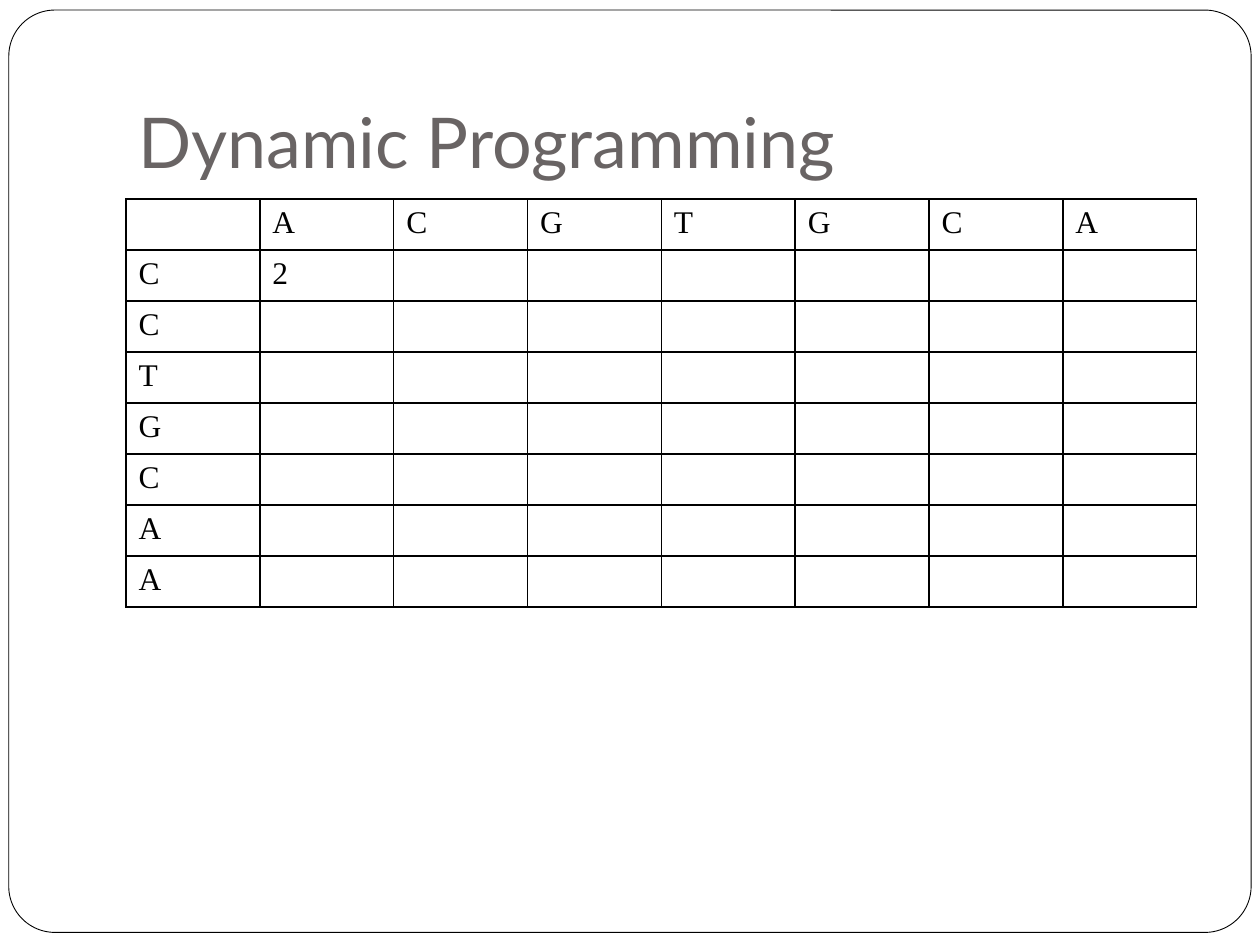
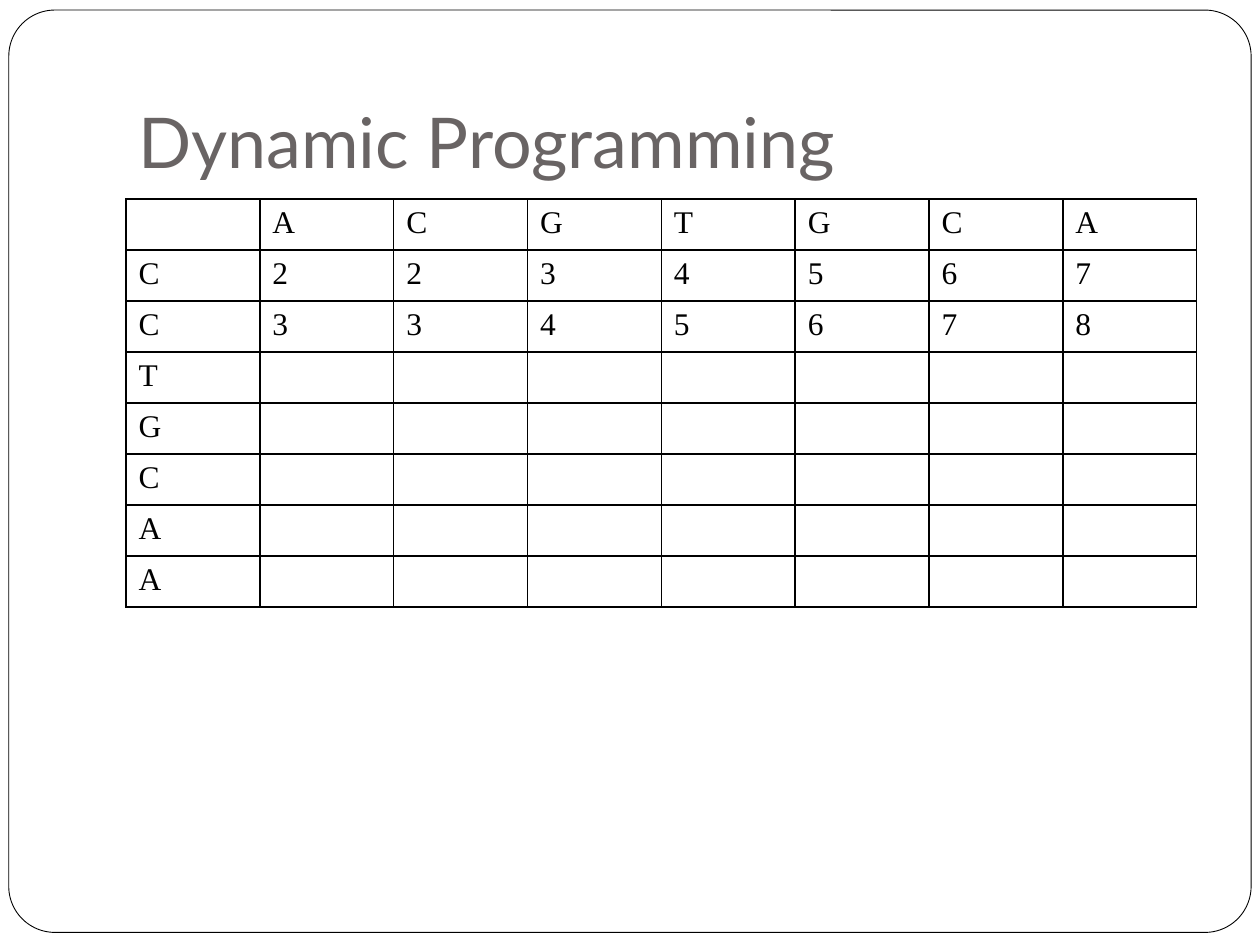
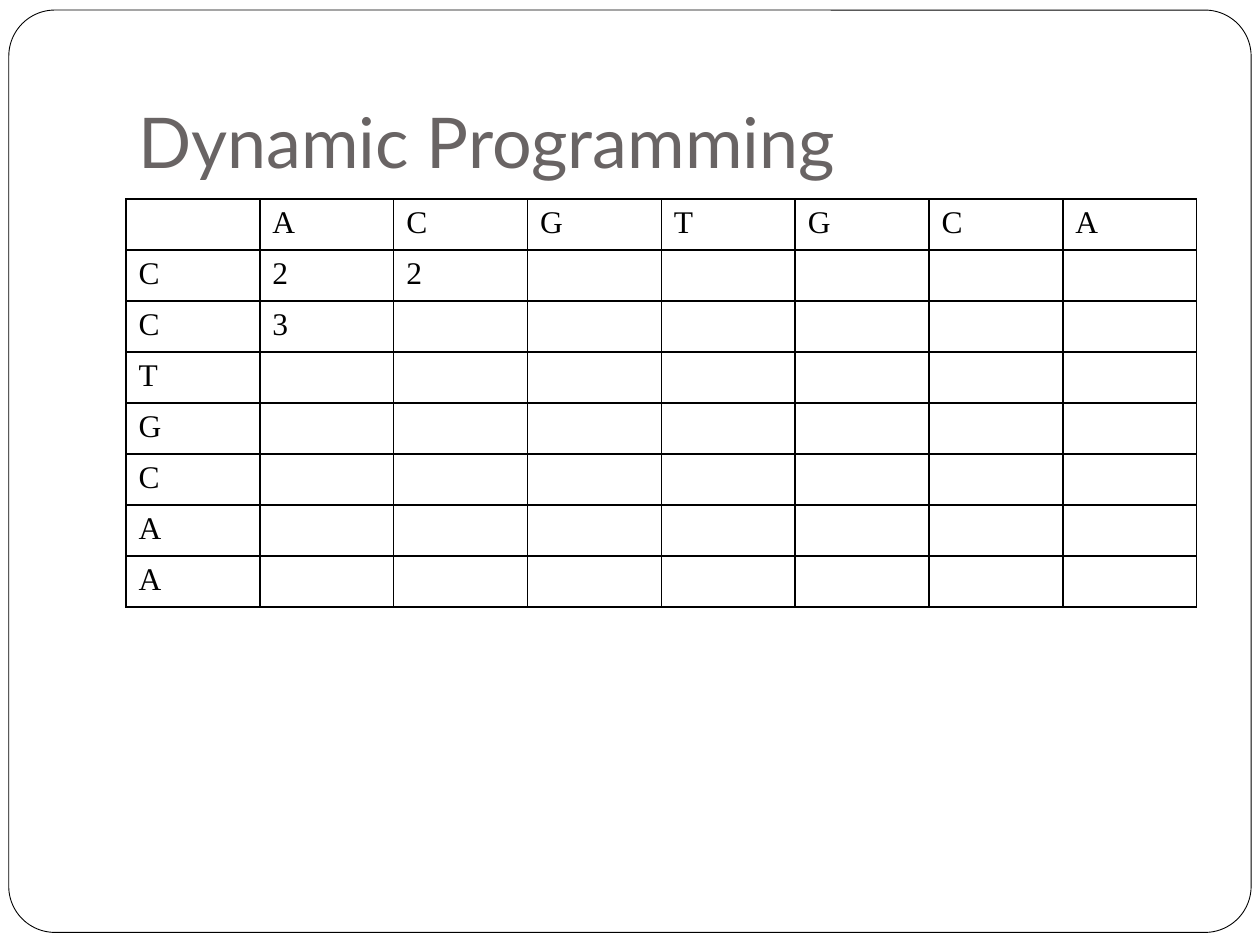
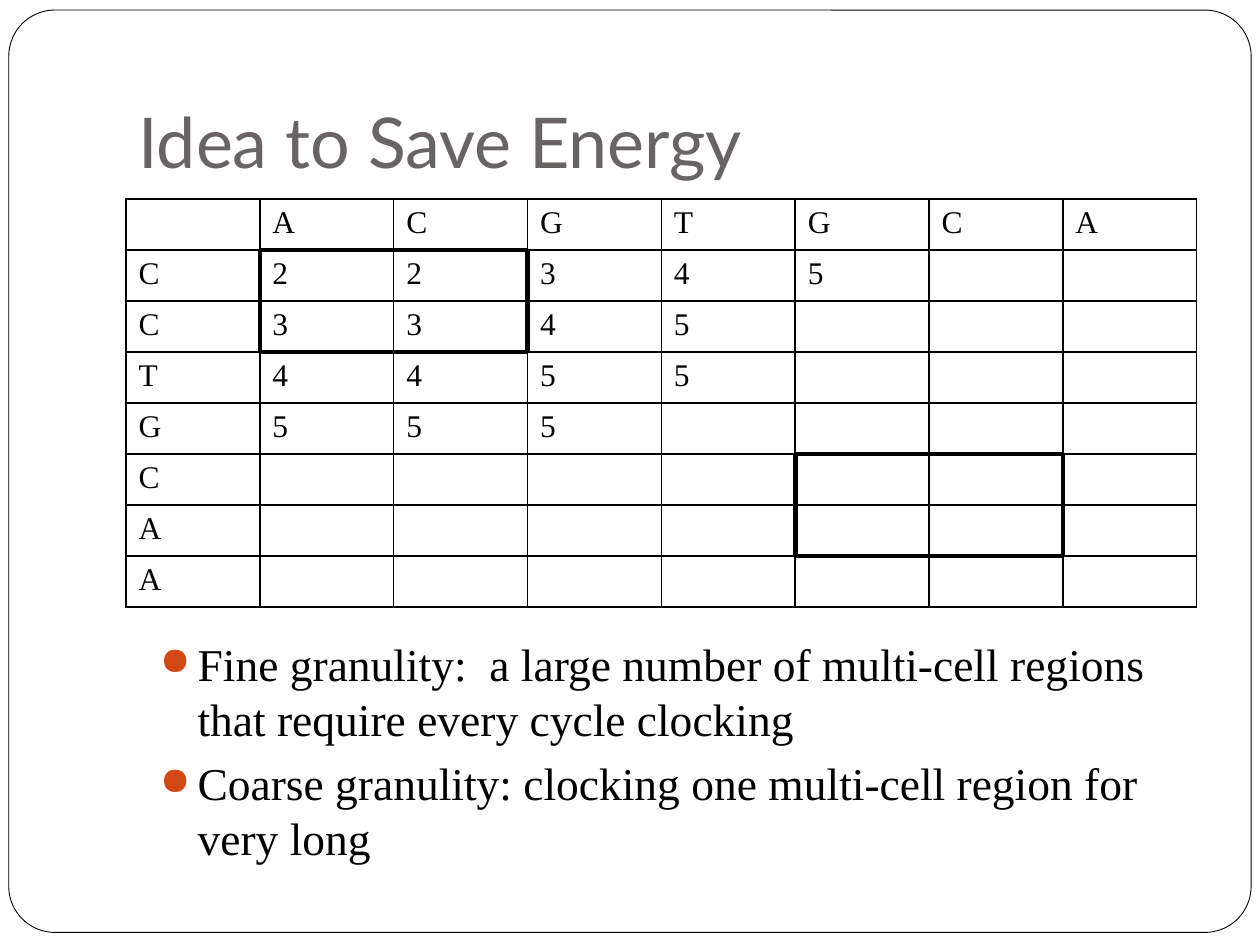
"""Build four slides on filling an alignment table by dynamic programming."""
from lxml import etree
from pptx import Presentation
from pptx import util as u
from pptx.dml import color
from pptx.enum import shapes, text
from pptx.oxml import ns

HUES = {"ink": "000000", "paper": "FFFFFF", "title": "696464", "dot": "D34817"}
SERIF = "Times New Roman"
TOP, SIDE = "ACGTGCA", "CCTGCAA"
EDGES = {"lnL": (0, -1), "lnR": (0, 1), "lnT": (-1, 0), "lnB": (1, 0)}
BLOCKS = {(r + i, c + j) for r, c in [(1, 1), (5, 5)] for i in (0, 1) for j in (0, 1)}
NOTES = [
    "Fine granulity:  a large number of multi-cell regions that require every cycle clocking",
    "Coarse granulity: clocking one multi-cell region for very long",
]
PAGES = [
    ("Dynamic Programming", ["2"], set(), []),
    ("Dynamic Programming", ["2234567", "3345678"], set(), []),
    ("Dynamic Programming", ["22", "3"], set(), []),
    ("Idea to Save Energy", ["22345", "3345", "4455", "555"], BLOCKS, NOTES),
]


def write(para, words, size=18, font=SERIF, hue="ink"):
    """Add one formatted run to a paragraph."""
    run = para.add_run()
    run.text = words
    run.font.size = u.Pt(size)
    run.font.name = font
    run.font.color.rgb = color.RGBColor.from_string(HUES[hue])


def node(up, tag, **attrs):
    """Append a drawing element and return it."""
    return etree.SubElement(up, ns.qn("a:" + tag), attrs)


deck = Presentation()
deck.slide_width, deck.slide_height = u.Inches(10), u.Inches(7.5)

for title, rows, thick, notes in PAGES:
    slide = deck.slides.add_slide(deck.slide_layouts[6])

    frame = slide.shapes.add_shape(
        shapes.MSO_SHAPE.ROUNDED_RECTANGLE,
        u.Inches(0.07), u.Inches(0.08), u.Inches(9.86), u.Inches(7.32))
    frame.adjustments[0] = 0.05
    frame.shadow.inherit = False
    frame.fill.solid()
    frame.fill.fore_color.rgb = color.RGBColor.from_string(HUES["paper"])
    frame.line.color.rgb = color.RGBColor.from_string(HUES["ink"])
    frame.line.width = u.Pt(0.5)

    head = slide.shapes.add_textbox(
        u.Inches(1), u.Inches(0.3), u.Inches(8.5), u.Inches(1.25)).text_frame
    head.word_wrap = True
    head.vertical_anchor = text.MSO_ANCHOR.BOTTOM
    head.margin_bottom = u.Inches(0.1)
    write(head.paragraphs[0], title, size=40, font="Lato", hue="title")

    grid = slide.shapes.add_table(
        len(SIDE) + 1, len(TOP) + 1,
        u.Inches(1), u.Inches(1.58), u.Inches(8.5), u.Inches(3.24)).table
    grid.first_row = grid.horz_banding = False
    lines = [" " + TOP]
    for i, mark in enumerate(SIDE):
        lines.append(mark + (rows[i] if i < len(rows) else ""))
    for r, line in enumerate(lines):
        for c in range(len(TOP) + 1):
            cell = grid.cell(r, c)
            if line[c:c + 1].strip():
                write(cell.text_frame.paragraphs[0], line[c])
            props = cell._tc.get_or_add_tcPr()
            for tag, (down, right) in EDGES.items():
                bold = ((r, c) in thick) != ((r + down, c + right) in thick)
                edge = node(props, tag, w=str(u.Pt(3 if bold else 1)))
                node(node(edge, "solidFill"), "srgbClr", val=HUES["ink"])
            cell.fill.background()

    if notes:
        body = slide.shapes.add_textbox(
            u.Inches(1.17), u.Inches(5), u.Inches(8.5), u.Inches(1.75)).text_frame
        body.word_wrap = True
        for i, note in enumerate(notes):
            para = body.add_paragraph() if i else body.paragraphs[0]
            para.space_before = u.Pt(5.8)
            write(para, note, size=26)
            props = para._p.get_or_add_pPr()
            props.set("marL", str(u.Inches(0.3)))
            props.set("indent", str(u.Inches(-0.3)))
            node(node(props, "buClr"), "srgbClr", val=HUES["dot"])
            node(props, "buSzPct", val="85000")
            node(props, "buChar", char="●")

deck.save("out.pptx")
